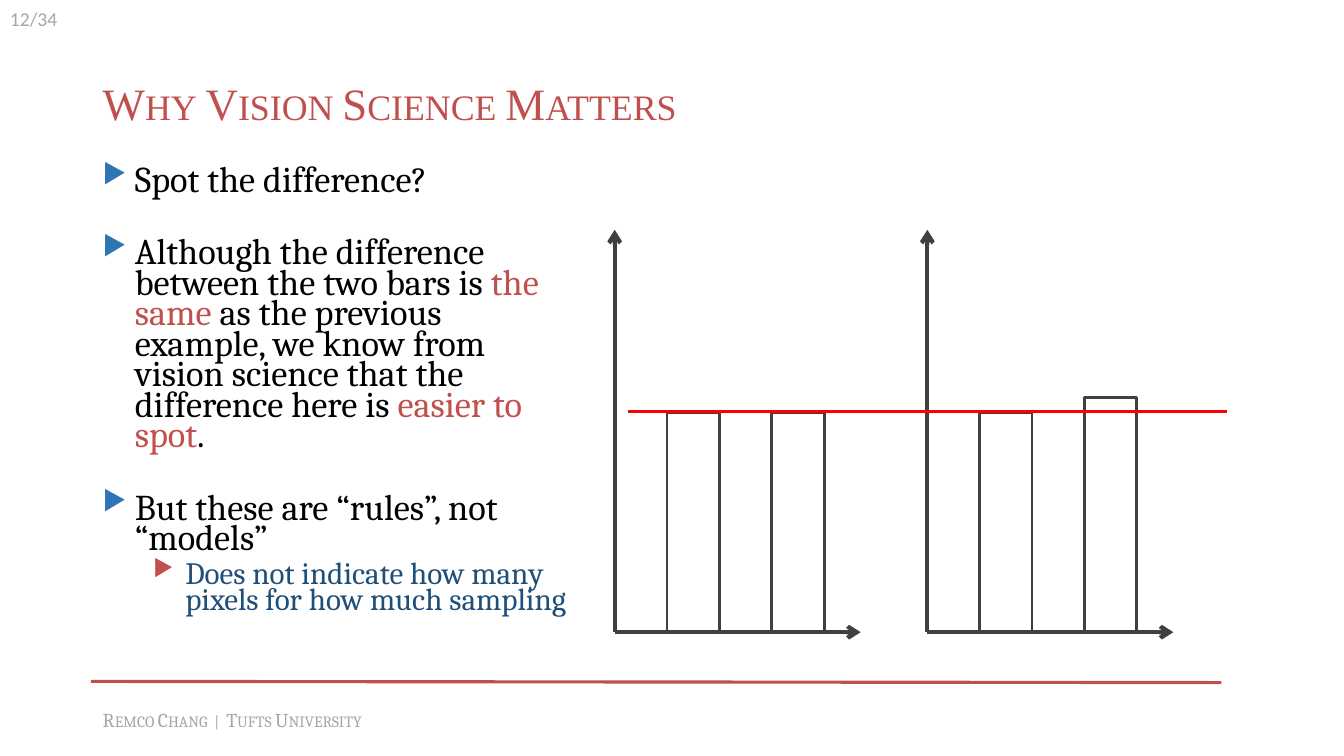
from lxml.etree import SubElement
from pptx import Presentation
from pptx.dml.color import RGBColor
from pptx.enum.shapes import MSO_CONNECTOR, MSO_SHAPE
from pptx.enum.text import MSO_ANCHOR
from pptx.oxml.ns import qn
from pptx.util import Cm, Pt

RED, GRAY, DARK, BLACK, NAVY = "C0504D", "A6A6A6", "404040", "000000", "1F4E79"

LABELS = [
    ("Remco Chang  |  Tufts University", (2.34, 17.7, 8.92, 0.86), "Cambria", 14, GRAY, True),
    ("12/34", (0, 0.03, 7.06, 0.86), "Calibri", 14, GRAY, False),
    ("Why Vision Science Matters", (2.34, 1.42, 28.5, 2.31), "Times New Roman", 32, RED, True),
]
BODY_BOX = (2.34, 4.11, 12.22, 12.85)
TOP_LEVEL = {"margin": 0.81, "bullet": "2E75B6", "size": 25.9}
SUB_LEVEL = {"margin": 2.08, "bullet": RED, "size": 22.2}
BULLETS = [
    (TOP_LEVEL, 0, [("Spot the difference?", BLACK)]),
    (TOP_LEVEL, 30, [
        ("Although the difference between the two bars is ", BLACK),
        ("the same ", RED),
        ("as the previous example, we know from vision science that the difference here is ", BLACK),
        ("easier to spot", RED),
        (".", BLACK),
    ]),
    (TOP_LEVEL, 30, [("But these are “rules”, not “models”", BLACK)]),
    (SUB_LEVEL, 5, [("Does not indicate how many pixels for how much sampling", NAVY)]),
]
BAR_CHARTS = [(15.49, (5.54, 5.54)), (23.37, (5.54, 5.92))]
BASELINE, AXIS_TOP, AXIS_LENGTH, BAR_WIDTH = 15.93, 5.79, 6.2, 1.32
FOOTER_RULE = (2.29, 17.17, 30.78, 17.2)
LEVEL_LINE = (15.82, 10.36, 30.91, 10.36)


def color(hex_value):
    return RGBColor.from_string(hex_value)


def format_run(run, font_name, size, hex_value):
    run.font.name = font_name
    run.font.size = Pt(size)
    run.font.color.rgb = color(hex_value)


def add_text_frame(slide, box):
    text_frame = slide.shapes.add_textbox(*map(Cm, box)).text_frame
    text_frame.word_wrap = True
    return text_frame


def add_label(slide, text, box, font_name, size, hex_value, small_caps):
    text_frame = add_text_frame(slide, box)
    text_frame.text = text
    text_frame.vertical_anchor = MSO_ANCHOR.MIDDLE
    run = text_frame.paragraphs[0].runs[0]
    format_run(run, font_name, size, hex_value)
    if small_caps:
        run._r.get_or_add_rPr().set("cap", "small")


def add_bullet(paragraph, level):
    properties = paragraph._p.get_or_add_pPr()
    properties.set("marL", str(Cm(level["margin"])))
    properties.set("indent", str(-Cm(0.81)))
    bullet_color = SubElement(properties, qn("a:buClr"))
    SubElement(bullet_color, qn("a:srgbClr"), val=level["bullet"])
    SubElement(properties, qn("a:buSzPct"), val="75000")
    SubElement(properties, qn("a:buChar"), char="▶")


def add_body(slide):
    text_frame = add_text_frame(slide, BODY_BOX)
    for index, (level, space_before, pieces) in enumerate(BULLETS):
        paragraph = text_frame.add_paragraph() if index else text_frame.paragraphs[0]
        add_bullet(paragraph, level)
        paragraph.line_spacing = 0.7
        paragraph.space_before = Pt(space_before)
        for text, hex_value in pieces:
            run = paragraph.add_run()
            run.text = text
            format_run(run, "Cambria", level["size"], hex_value)


def add_line(slide, ends, hex_value, width, arrow=False):
    connector = slide.shapes.add_connector(MSO_CONNECTOR.STRAIGHT, *map(Cm, ends))
    connector.line.color.rgb = color(hex_value)
    connector.line.width = Pt(width)
    if arrow:
        SubElement(connector.line._get_or_add_ln(), qn("a:tailEnd"), type="arrow")
    SubElement(connector._element.spPr, qn("a:effectLst"))


def add_bar_chart(slide, left, heights):
    add_line(slide, (left, BASELINE, left, AXIS_TOP), DARK, 3, True)
    add_line(slide, (left, BASELINE, left + AXIS_LENGTH, BASELINE), DARK, 3, True)
    for index, height in enumerate(heights):
        bar_left = left + BAR_WIDTH * (1 + 2 * index)
        box = (bar_left, BASELINE - height, BAR_WIDTH, height)
        bar = slide.shapes.add_shape(MSO_SHAPE.RECTANGLE, *map(Cm, box))
        bar.shadow.inherit = False
        bar.fill.background()
        bar.line.color.rgb = color(DARK)
        bar.line.width = Pt(2)


def main():
    presentation = Presentation()
    presentation.slide_width, presentation.slide_height = Cm(33.87), Cm(19.05)
    slide = presentation.slides.add_slide(presentation.slide_layouts[6])
    add_line(slide, FOOTER_RULE, RED, 2.25)
    for label in LABELS:
        add_label(slide, *label)
    add_body(slide)
    for left, heights in BAR_CHARTS:
        add_bar_chart(slide, left, heights)
    add_line(slide, LEVEL_LINE, "FF0000", 2.25)
    presentation.save("out.pptx")


if __name__ == "__main__":
    main()
